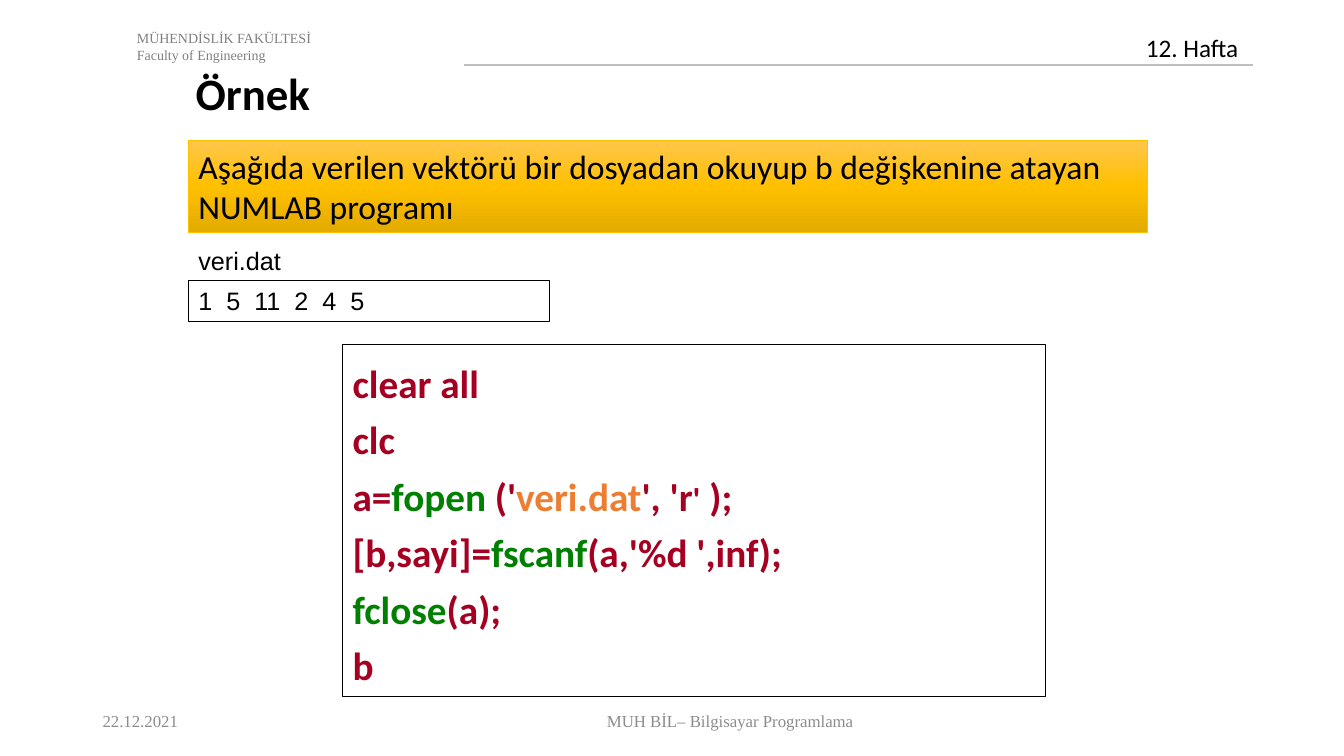
import copy
from dataclasses import dataclass
from typing import Optional

import pptx
import pptx.dml.color
import pptx.enum.shapes
import pptx.enum.text
import pptx.oxml.ns
import pptx.oxml.xmlchemy
import pptx.shapes.base
import pptx.slide
import pptx.util

Pt = pptx.util.Pt
RGBColor = pptx.dml.color.RGBColor
Align = pptx.enum.text.PP_ALIGN
Anchor = pptx.enum.text.MSO_ANCHOR
AutoSize = pptx.enum.text.MSO_AUTO_SIZE

BLACK = RGBColor(0x00, 0x00, 0x00)
HEADER_GRAY = RGBColor(0x80, 0x80, 0x80)
FOOTER_GRAY = RGBColor(0x8C, 0x8C, 0x8C)
RULE_GRAY = RGBColor(0xBF, 0xBF, 0xBF)
GOLD = RGBColor(0xFF, 0xC0, 0x00)
GOLD_LIGHT = RGBColor(0xFF, 0xC6, 0x4B)
GOLD_DARK = RGBColor(0xE3, 0xAB, 0x00)
CODE_RED = RGBColor(0xA5, 0x00, 0x21)
CODE_GREEN = RGBColor(0x00, 0x80, 0x00)
CODE_ORANGE = RGBColor(0xED, 0x7D, 0x31)


@dataclass(frozen=True)
class Run:
    text: str
    color: Optional[RGBColor] = None
    size: Optional[float] = None


@dataclass(frozen=True)
class Style:
    font: str
    size: float
    color: RGBColor = BLACK
    bold: bool = False
    align: Align = Align.LEFT
    anchor: Anchor = Anchor.TOP
    line_spacing: float = 1.0
    grow: bool = True


@dataclass(frozen=True)
class Block:
    left: float
    top: float
    width: float
    height: float
    style: Style
    lines: tuple[tuple[Run, ...], ...]
    border: Optional[RGBColor] = None
    border_width: float = 1
    gradient: tuple[RGBColor, ...] = ()


HEADER = Style("Times New Roman", 10, HEADER_GRAY)
WEEK = Style("Calibri", 18)
TITLE = Style("Calibri", 32, bold=True)
TASK = Style("Calibri", 24)
DATA = Style("Arial", 18)
CODE = Style("Calibri", 28, CODE_RED, bold=True, line_spacing=1.2)
DATE = Style("Times New Roman", 12, FOOTER_GRAY, anchor=Anchor.MIDDLE, grow=False)
FOOTER = Style("Times New Roman", 12, FOOTER_GRAY, align=Align.CENTER,
               anchor=Anchor.MIDDLE, grow=False)

TITLE_BLOCK = Block(132.5, 43.2, 339, 46, TITLE, ((Run("Örnek"),),))

BLOCKS = (
    Block(90.7, 17.3, 480, 31.5, HEADER,
          ((Run("MÜHENDİSLİK FAKÜLTESİ"),), (Run("Faculty of Engineering"),))),
    Block(811.4, 19.4, 83, 29, WEEK, ((Run("12. Hafta"),),)),
    Block(134.6, 100.5, 685, 65.5, TASK,
          ((Run("Aşağıda verilen vektörü bir dosyadan okuyup b değişkenine "
                "atayan NUMLAB programı"),),),
          border=GOLD, border_width=0.5, gradient=(GOLD_LIGHT, GOLD, GOLD_DARK)),
    Block(134.6, 171.4, 110, 29, DATA, ((Run("veri.dat"),),)),
    Block(134.6, 200.2, 258, 29.5, DATA, ((Run("1  5  11  2  4  5"),),), border=BLACK),
    Block(244.8, 246.2, 502, 251.3, CODE, (
        (Run("clear all"),),
        (Run("clc"),),
        (Run("a="), Run("fopen", CODE_GREEN), Run(" ('"), Run("veri.dat", CODE_ORANGE),
         Run("', 'r"), Run("'", size=24), Run(" );")),
        (Run("[b,sayi]="), Run("fscanf", CODE_GREEN), Run("(a,'%d ',inf);")),
        (Run("fclose", CODE_GREEN), Run("(a);")),
        (Run("b"),),
    ), border=BLACK),
    Block(66.2, 500.4, 113, 28.8, DATE, ((Run("22.12.2021"),),)),
    Block(196.6, 500.4, 650, 28.8, FOOTER, ((Run("MUH BİL– Bilgisayar Programlama"),),)),
)


def write_text(shape: pptx.shapes.base.BaseShape, block: Block) -> None:
    style = block.style
    frame = shape.text_frame
    frame.word_wrap = True
    frame.auto_size = AutoSize.SHAPE_TO_FIT_TEXT if style.grow else AutoSize.NONE
    frame.vertical_anchor = style.anchor
    for index, line in enumerate(block.lines):
        paragraph = frame.add_paragraph() if index else frame.paragraphs[0]
        paragraph.alignment = style.align
        paragraph.line_spacing = style.line_spacing
        for item in line:
            run = paragraph.add_run()
            run.text = item.text
            run.font.name = style.font
            run.font.size = Pt(item.size or style.size)
            run.font.bold = style.bold
            run.font.color.rgb = item.color or style.color


def fill_gradient(shape: pptx.shapes.base.BaseShape, colors: tuple[RGBColor, ...]) -> None:
    shape.fill.gradient()
    shape.fill.gradient_angle = 270
    stop_list = shape._element.spPr.find(".//" + pptx.oxml.ns.qn("a:gsLst"))
    while len(stop_list) < len(colors):
        stop_list.append(copy.deepcopy(stop_list[0]))
    for index, (stop, color) in enumerate(zip(shape.fill.gradient_stops, colors)):
        stop.position = index / (len(colors) - 1)
        stop.color.rgb = color


def add_block(slide: pptx.slide.Slide, block: Block) -> None:
    bounds = [Pt(value) for value in (block.left, block.top, block.width, block.height)]
    if block.border is None:
        shape = slide.shapes.add_textbox(*bounds)
    else:
        shape = slide.shapes.add_shape(pptx.enum.shapes.MSO_SHAPE.RECTANGLE, *bounds)
        shape.shadow.inherit = False
        shape.line.color.rgb = block.border
        shape.line.width = Pt(block.border_width)
        if block.gradient:
            fill_gradient(shape, block.gradient)
        else:
            shape.fill.background()
    write_text(shape, block)


def add_header_rule(slide: pptx.slide.Slide) -> None:
    rule = slide.shapes.add_connector(
        pptx.enum.shapes.MSO_CONNECTOR.STRAIGHT, Pt(331.2), Pt(46.4), Pt(895), Pt(46.4))
    rule.line.color.rgb = RULE_GRAY
    rule.line.width = Pt(1.5)
    rule._element.spPr.append(pptx.oxml.xmlchemy.OxmlElement("a:effectLst"))


def place_title(slide: pptx.slide.Slide, block: Block) -> None:
    title = slide.shapes.title
    title.left, title.top = Pt(block.left), Pt(block.top)
    title.width, title.height = Pt(block.width), Pt(block.height)
    write_text(title, block)


def main() -> None:
    presentation = pptx.Presentation()
    presentation.slide_width = Pt(960)
    presentation.slide_height = Pt(540)
    slide = presentation.slides.add_slide(presentation.slide_layouts[5])
    place_title(slide, TITLE_BLOCK)
    add_header_rule(slide)
    for block in BLOCKS:
        add_block(slide, block)
    presentation.save("out.pptx")


if __name__ == "__main__":
    main()
